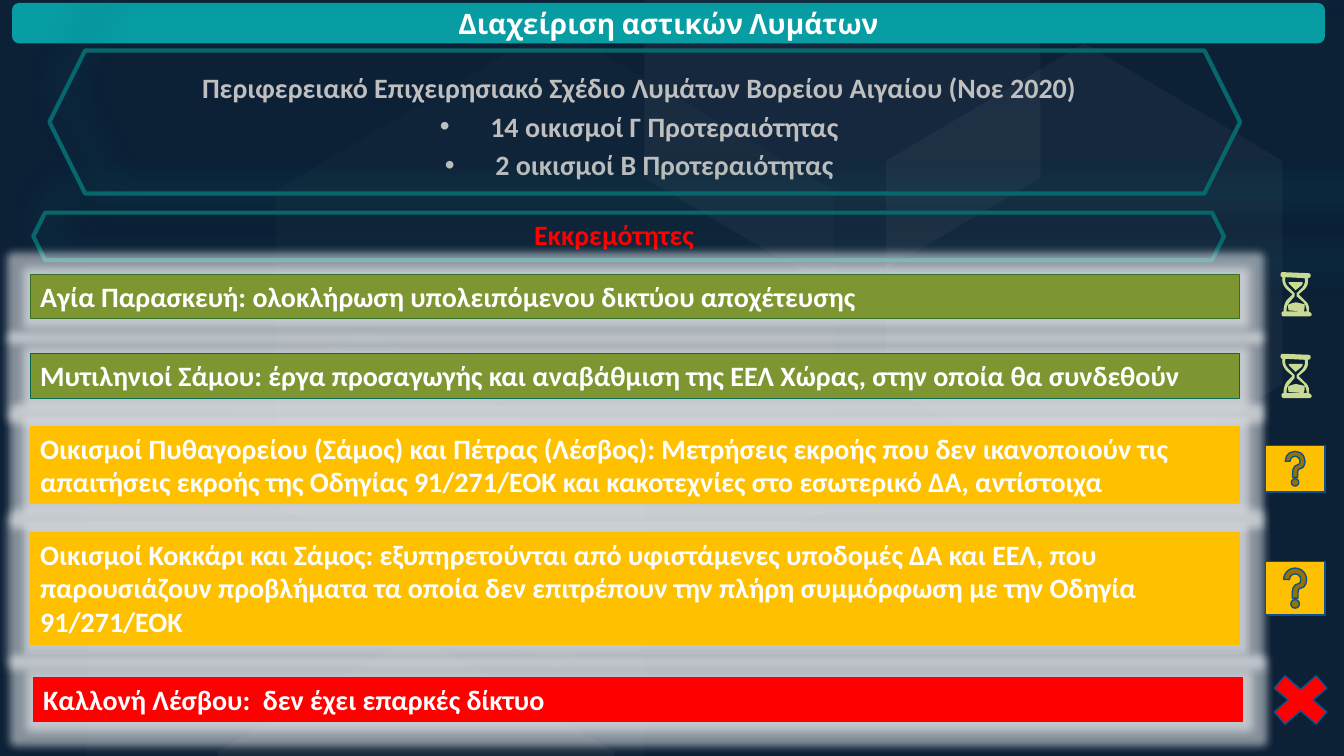
from dataclasses import dataclass

from lxml import etree
from pptx import Presentation
from pptx import util as u
from pptx.dml.color import RGBColor
from pptx.enum import shapes, text
from pptx.oxml.ns import qn

PX = 9144
KIND = shapes.MSO_SHAPE


@dataclass(frozen=True)
class Theme:
    night: str = "0C2036"
    white: str = "FFFFFF"
    teal: str = "089CA3"
    deep_teal: str = "06686C"
    silver: str = "BFBFBF"
    olive: str = "7E9632"
    moss: str = "387026"
    pine: str = "08684E"
    amber: str = "FFC000"
    red: str = "FF0000"
    navy: str = "0B5292"
    lime: str = "C9DA92"
    title_font: str = "Cabin"
    body_font: str = "Calibri"
    size: int = 20
    frame_line: float = 3
    row_line: float = 0.75
    icon_line: float = 1


HOURGLASS = [
    [(2, 0), (27, 1), (29, 1, 30, 2, 30, 3), (30, 5, 29, 6, 27, 6),
     (28, 10, 27, 14, 24, 17), (18, 22), (24, 28), (28, 31, 29, 35, 28, 39),
     (30, 40, 31, 41, 31, 42), (31, 43, 30, 44, 28, 44), (3, 44),
     (2, 44, 1, 43, 1, 41), (1, 40, 2, 39, 3, 39), (3, 35, 4, 31, 6, 28),
     (12, 22), (6, 17), (3, 14, 1, 9, 2, 5), (1, 5, 0, 4, 0, 3),
     (0, 1, 1, 0, 2, 0)],
    [(5, 5), (4, 9, 5, 12, 8, 15), (14, 21), (14, 24), (9, 30),
     (6, 33, 6, 36, 6, 39), (26, 39), (26, 36, 25, 33, 23, 30), (16, 24),
     (16, 21), (22, 15), (24, 12, 25, 9, 24, 6)],
    [(8, 10), (22, 10), (22, 11, 22, 12, 21, 13), (15, 18), (9, 12),
     (9, 12, 8, 11, 8, 10)],
    [(16, 30), (19, 31, 21, 31, 24, 32), (24, 34, 24, 37, 23, 39), (8, 38),
     (8, 36, 7, 34, 8, 32), (11, 31, 14, 30, 16, 30)],
]


def flatten(steps, count=6):
    points = [steps[0]]
    for step in steps[1:]:
        if len(step) == 2:
            points.append(step)
            continue
        controls = [points[-1], step[:2], step[2:4], step[4:]]
        for i in range(1, count + 1):
            t = i / count
            weights = ((1 - t) ** 3, 3 * t * (1 - t) ** 2, 3 * t * t * (1 - t), t ** 3)
            points.append(tuple(sum(w * c[axis] for w, c in zip(weights, controls))
                                for axis in (0, 1)))
    return points


class Painter:
    """Draws styled elements on the current slide, with lengths in px."""

    def __init__(self, slide, theme):
        self.slide = slide
        self.theme = theme
        self.background(theme.night)

    def background(self, color):
        fill = self.slide.background.fill
        fill.solid()
        fill.fore_color.rgb = RGBColor.from_string(color)

    def paint(self, shape, fill=None, line=None, width=1):
        shape.shadow.inherit = False
        if fill:
            shape.fill.solid()
            shape.fill.fore_color.rgb = RGBColor.from_string(fill)
        else:
            shape.fill.background()
        if line:
            shape.line.color.rgb = RGBColor.from_string(line)
            shape.line.width = u.Pt(width)
        else:
            shape.line.fill.background()

    def shape(self, kind, at, fill=None, line=None, width=1):
        shape = self.slide.shapes.add_shape(kind, *(n * PX for n in at))
        self.paint(shape, fill, line, width)
        return shape

    def outline(self, contours, left, top, fill, opacity=100):
        placed = [[((left + x) * PX, (top + y) * PX) for x, y in points]
                  for points in contours]
        builder = self.slide.shapes.build_freeform(*placed[0][0])
        for index, points in enumerate(placed):
            if index:
                builder.move_to(*points[0])
            builder.add_line_segments(points[1:], close=True)
        shape = builder.convert_to_shape()
        self.paint(shape, fill)
        if opacity < 100:
            color = shape._element.spPr.find(qn("a:solidFill"))[0]
            etree.SubElement(color, qn("a:alpha"), val=str(opacity * 1000))

    def facet(self, left, top, width, height, opacity):
        upper, lower = height * 0.256, height * 0.744
        points = [(width / 2, 0), (width, upper), (width, lower),
                  (width / 2, height), (0, lower), (0, upper)]
        self.outline([points], left, top, self.theme.white, opacity)

    def effect(self, shape, name, color, opacity, **settings):
        effects = shape._element.spPr.find(qn("a:effectLst"))
        node = etree.SubElement(effects, qn("a:" + name),
                                {key: str(value) for key, value in settings.items()})
        tint = etree.SubElement(node, qn("a:srgbClr"), val=color)
        etree.SubElement(tint, qn("a:alpha"), val=str(opacity * 1000))

    def frame(self, at):
        color = self.theme.deep_teal
        shape = self.shape(KIND.HEXAGON, at, None, color, self.theme.frame_line)
        self.effect(shape, "outerShdw", color, 45, blurRad=u.Pt(24), dist=u.Pt(6),
                    dir=60000, sx=150000, sy=150000, algn="bl", rotWithShape=0)

    def add_span(self, para, words, color, font=None):
        span = para.add_run()
        span.text = words
        span.font.name = font or self.theme.body_font
        span.font.size = u.Pt(self.theme.size)
        span.font.bold = True
        span.font.color.rgb = RGBColor.from_string(color)

    def bullet(self, para):
        props = para._p.get_or_add_pPr()
        props.set("marL", str(50 * PX))
        props.set("indent", str(-50 * PX))
        etree.SubElement(props, qn("a:buFont"), typeface="Arial")
        etree.SubElement(props, qn("a:buChar"), char="•")

    def text(self, at, lines, color, after=0):
        box = self.slide.shapes.add_textbox(*(n * PX for n in at))
        frame = box.text_frame
        frame.word_wrap = True
        frame.auto_size = text.MSO_AUTO_SIZE.SHAPE_TO_FIT_TEXT
        for index, words in enumerate(lines):
            para = frame.add_paragraph() if index else frame.paragraphs[0]
            para.alignment = text.PP_ALIGN.CENTER
            para.line_spacing = 1.15
            para.space_after = u.Pt(after)
            if index:
                self.bullet(para)
            self.add_span(para, words, color)

    def banner(self, at, words):
        box = self.shape(KIND.ROUNDED_RECTANGLE, at, self.theme.teal)
        box.text_frame.vertical_anchor = text.MSO_ANCHOR.MIDDLE
        para = box.text_frame.paragraphs[0]
        para.alignment = text.PP_ALIGN.CENTER
        self.add_span(para, words, self.theme.white, self.theme.title_font)

    def row(self, left, top, height, fill, line, words):
        box = self.shape(KIND.RECTANGLE, (left, top, 1199, height), fill, line,
                         self.theme.row_line)
        self.effect(box, "glow", self.theme.white, 50, rad=u.Pt(11))
        frame = box.text_frame
        frame.word_wrap = True
        frame.auto_size = text.MSO_AUTO_SIZE.SHAPE_TO_FIT_TEXT
        frame.vertical_anchor = text.MSO_ANCHOR.TOP
        para = frame.paragraphs[0]
        para.alignment = text.PP_ALIGN.LEFT
        self.add_span(para, words, self.theme.white)

    def icon(self, kind, at, fill):
        self.shape(kind, at, fill, self.theme.navy, self.theme.icon_line)

    def hourglass(self, left, top):
        self.outline([flatten(steps) for steps in HOURGLASS], left, top, self.theme.lime)


def main():
    deck = Presentation()
    deck.slide_width, deck.slide_height = u.Inches(13.33), u.Inches(7.5)
    theme = Theme()
    page = Painter(deck.slides.add_slide(deck.slide_layouts[6]), theme)
    for facet in [(274, 25, 553, 640, 2), (879, 43, 393, 455, 4), (639, -162, 393, 455, 4),
                  (216, 629, 393, 455, 4), (86, 325, 553, 640, 2)]:
        page.facet(*facet)
    page.banner((12, 3, 1302, 40), "Διαχείριση αστικών Λυμάτων")
    page.frame((49, 50, 1181, 142))
    page.text((72, 60, 1124, 126),
              ["Περιφερειακό Επιχειρησιακό Σχέδιο Λυμάτων Βορείου Αιγαίου (Νοε 2020)",
               "14 οικισμοί Γ Προτεραιότητας", "2 οικισμοί Β Προτεραιότητας"], theme.silver)
    page.frame((33, 211, 1181, 47))
    page.text((160, 206, 898, 47), ["Εκκρεμότητες"], theme.red, after=10)
    for row in [
        (30, 272, 44, theme.olive, theme.moss,
         "Αγία Παρασκευή: ολοκλήρωση υπολειπόμενου δικτύου αποχέτευσης"),
        (30, 351, 44, theme.olive, theme.pine,
         "Μυτιληνιοί Σάμου: έργα προσαγωγής και αναβάθμιση της ΕΕΛ Χώρας, στην οποία θα συνδεθούν"),
        (30, 423, 77, theme.amber, theme.amber,
         "Οικισμοί Πυθαγορείου (Σάμος) και Πέτρας (Λέσβος): Μετρήσεις εκροής που δεν ικανοποιούν τις "
         "απαιτήσεις εκροής της Οδηγίας 91/271/ΕΟΚ και κακοτεχνίες στο εσωτερικό ΔΑ, αντίστοιχα"),
        (30, 528, 111, theme.amber, theme.amber,
         "Οικισμοί Κοκκάρι και Σάμος: εξυπηρετούνται από υφιστάμενες υποδομές ΔΑ και ΕΕΛ, που "
         "παρουσιάζουν προβλήματα τα οποία δεν επιτρέπουν την πλήρη συμμόρφωση με την Οδηγία 91/271/ΕΟΚ"),
        (33, 672, 44, theme.red, theme.red, "Καλλονή Λέσβου:  δεν έχει επαρκές δίκτυο"),
    ]:
        page.row(*row)
    for top in (270, 351):
        page.hourglass(1270, top)
    for top, height in ((442, 46), (557, 53)):
        page.icon(KIND.ACTION_BUTTON_HELP, (1255, top, 59, height), theme.amber)
    page.icon(KIND.MATH_MULTIPLY, (1250, 660, 80, 69), theme.red)
    deck.save("out.pptx")


if __name__ == "__main__":
    main()
